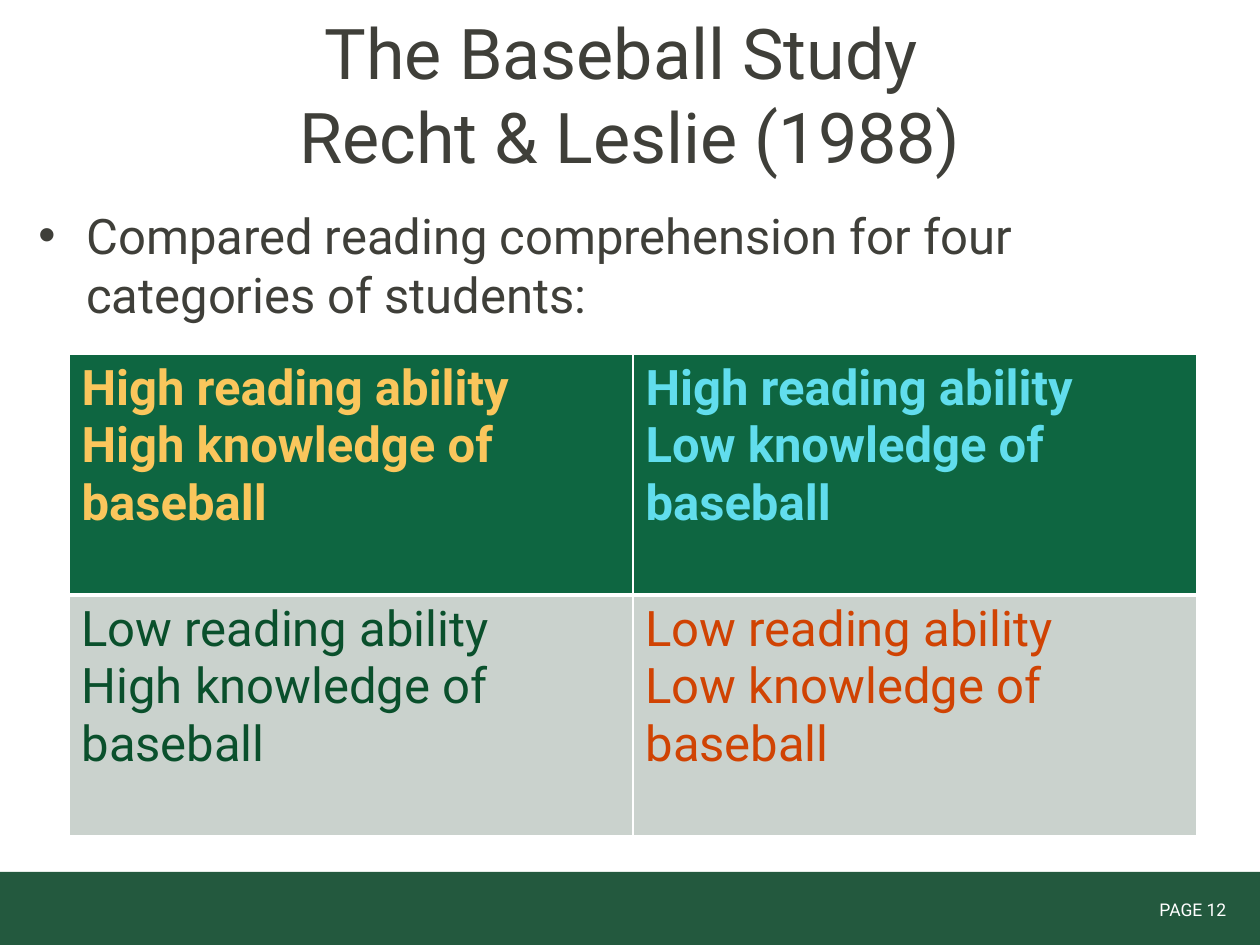
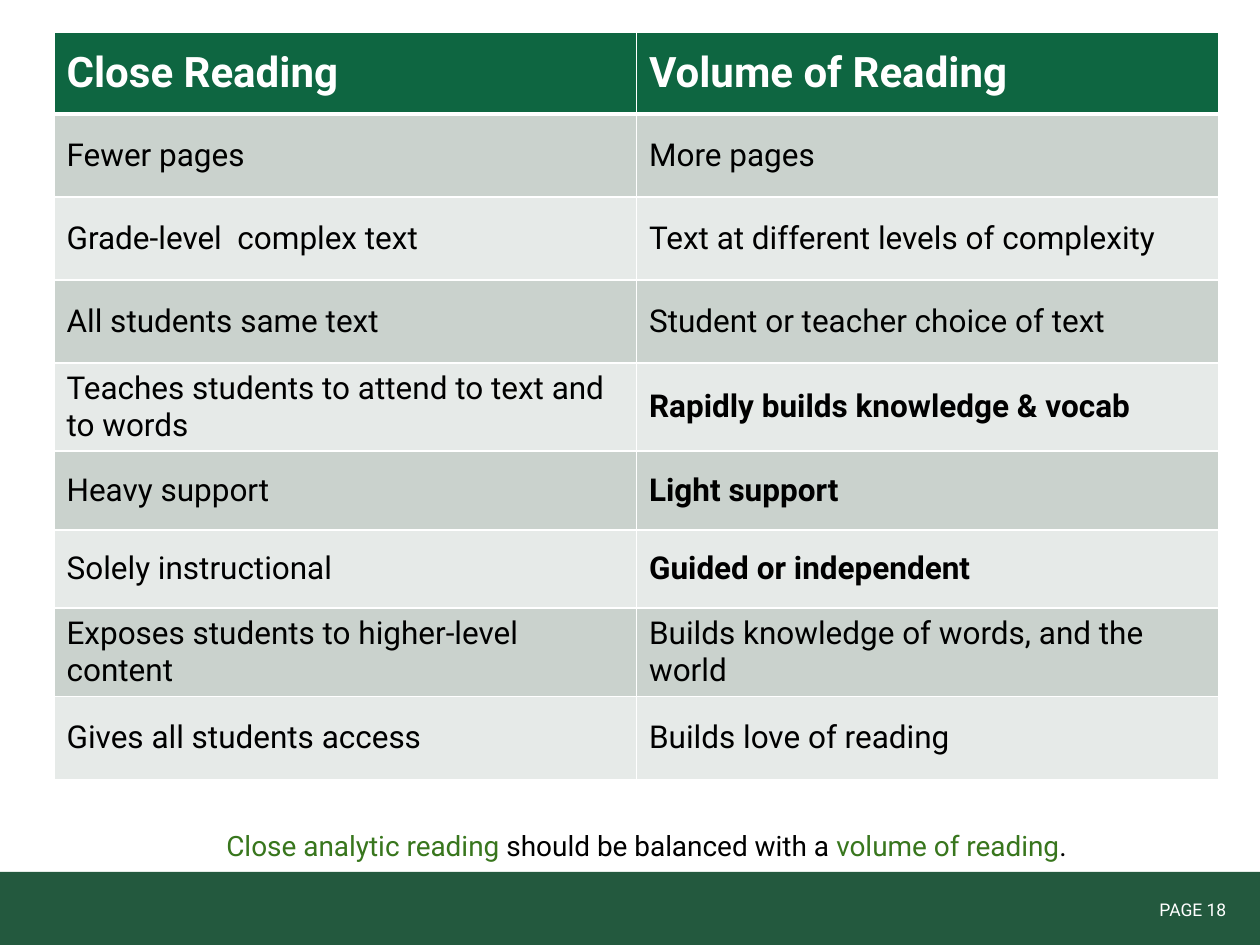
from dataclasses import dataclass

from lxml import etree
from pptx import Presentation
from pptx import util as u
from pptx.dml import color
from pptx.enum import shapes, text
from pptx.oxml import ns

PX_PER_INCH = 126
FONT = "Roboto"
WHITE, BLACK, INK = "FFFFFF", "000000", "3F3F39"
BAND_GREEN, HEADER_GREEN, ACCENT_GREEN = "23593E", "0E6641", "38761D"
DARK_ROW, LIGHT_ROW = "CAD2CD", "E6EAE8"
THIN, THICK = 1, 3
TITLE_ONLY, BLANK = 5, 6


@dataclass(frozen=True)
class Box:
    left: int
    top: int
    width: int
    height: int

    def emu(self) -> tuple[int, int, int, int]:
        return px(self.left), px(self.top), px(self.width), px(self.height)


@dataclass(frozen=True)
class Style:
    size: int
    ink: str
    bold: bool = False


@dataclass(frozen=True)
class Cell:
    lines: tuple[str, ...]
    style: Style


BAND = Box(0, 872, 1261, 74)
PAGE_LABEL = Box(1043, 893, 200, 34)
LABEL_STYLE = Style(10, WHITE)
HEAD_STYLE = Style(24, WHITE, bold=True)
ROW_STYLE = Style(18, BLACK)
STRONG_STYLE = Style(18, BLACK, bold=True)


def px(length: int) -> int:
    return round(length * u.Inches(1) / PX_PER_INCH)


def rgb(value: str) -> color.RGBColor:
    return color.RGBColor.from_string(value)


def set_font(font, style: Style) -> None:
    font.name = FONT
    font.size = u.Pt(style.size)
    font.bold = style.bold
    font.color.rgb = rgb(style.ink)


def add_text_box(page, box: Box):
    """Add an empty wrapping text box and return its text frame."""
    frame = page.shapes.add_textbox(*box.emu()).text_frame
    frame.word_wrap = True
    return frame


def add_page(deck, layout: int, number: int):
    """Add a slide with the green band and its page label."""
    page = deck.slides.add_slide(deck.slide_layouts[layout])
    band = page.shapes.add_shape(shapes.MSO_SHAPE.RECTANGLE, *BAND.emu())
    band.shadow.inherit = False
    band.fill.solid()
    band.fill.fore_color.rgb = rgb(BAND_GREEN)
    band.line.fill.background()
    para = add_text_box(page, PAGE_LABEL).paragraphs[0]
    para.text = f"PAGE {number} "
    para.alignment = text.PP_ALIGN.RIGHT
    set_font(para.font, LABEL_STYLE)
    return page


def set_title(page, box: Box, lines: tuple[str, ...], style: Style) -> None:
    title = page.shapes.title
    title.left, title.top, title.width, title.height = box.emu()
    frame = title.text_frame
    frame.word_wrap = True
    frame.auto_size = text.MSO_AUTO_SIZE.NONE
    frame.vertical_anchor = text.MSO_ANCHOR.MIDDLE
    para = frame.paragraphs[0]
    for index, line in enumerate(lines):
        if index:
            para.add_line_break()
        para.add_run().text = line
    para.alignment = text.PP_ALIGN.CENTER
    set_font(para.font, style)


def add_bullet(para, ink: str, indent: int) -> None:
    properties = para._p.get_or_add_pPr()
    properties.set("marL", str(px(indent)))
    properties.set("indent", str(-px(indent)))
    bullet_color = etree.SubElement(properties, ns.qn("a:buClr"))
    etree.SubElement(bullet_color, ns.qn("a:srgbClr"), val=ink)
    etree.SubElement(properties, ns.qn("a:buFont"), typeface="Arial")
    etree.SubElement(properties, ns.qn("a:buChar"), char="•")


def set_borders(cell, top: int, bottom: int) -> None:
    properties = cell._tc.get_or_add_tcPr()
    sides = {"lnL": THIN, "lnR": THIN, "lnT": top, "lnB": bottom}
    for side, points in sides.items():
        line = etree.SubElement(properties, ns.qn(f"a:{side}"), w=str(u.Pt(points)))
        fill = etree.SubElement(line, ns.qn("a:solidFill"))
        etree.SubElement(fill, ns.qn("a:srgbClr"), val=WHITE)


def add_grid(page, box: Box, heights: list[int], rows: list[tuple[Cell, ...]],
             anchor: text.MSO_ANCHOR) -> None:
    """Add a table with a green header row over alternating grey rows."""
    grid = page.shapes.add_table(len(rows), len(rows[0]), *box.emu()).table
    grid.horz_banding = False
    for row, height in zip(grid.rows, heights):
        row.height = px(height)
    for row_index, row in enumerate(rows):
        fill = HEADER_GREEN if row_index == 0 else (LIGHT_ROW, DARK_ROW)[row_index % 2]
        top = THICK if row_index == 1 else THIN
        bottom = THICK if row_index == 0 else THIN
        for column_index, content in enumerate(row):
            cell = grid.cell(row_index, column_index)
            set_borders(cell, top, bottom)
            cell.fill.solid()
            cell.fill.fore_color.rgb = rgb(fill)
            cell.vertical_anchor = anchor
            cell.text = "\n".join(content.lines)
            for para in cell.text_frame.paragraphs:
                set_font(para.font, content.style)


def build_baseball_study(deck) -> None:
    page = add_page(deck, TITLE_ONLY, 12)
    set_title(page, Box(63, 15, 1134, 158),
              ("The Baseball Study ", "Recht & Leslie (1988)"), Style(40, INK))

    para = add_text_box(page, Box(26, 199, 1134, 624)).paragraphs[0]
    para.text = "Compared reading comprehension for four categories of students:"
    add_bullet(para, INK, 48)
    set_font(para.font, Style(28, INK))

    def group(reading: str, knowledge: str, ink: str, bold: bool = False) -> Cell:
        lines = (f"{reading} reading ability", f"{knowledge} knowledge of baseball")
        return Cell(lines, Style(28, ink, bold))

    groups = [
        (group("High", "High", "FAC65C", True), group("High", "Low", "61DDED", True)),
        (group("Low", "High", "0A502C"), group("Low", "Low", "D04303")),
    ]
    add_grid(page, Box(69, 354, 1128, 482), [241, 241], groups, text.MSO_ANCHOR.TOP)


def build_reading_comparison(deck) -> None:
    page = add_page(deck, BLANK, 18)
    comparison = [
        ("Close Reading", "Volume of Reading"),
        ("Fewer pages", "More pages"),
        ("Grade-level  complex text", "Text at different levels of complexity"),
        ("All students same text", "Student or teacher choice of text"),
        ("Teaches students to attend to text and to words",
         "Rapidly builds knowledge & vocab"),
        ("Heavy support", "Light support"),
        ("Solely instructional", "Guided or independent"),
        ("Exposes students to higher-level content",
         "Builds knowledge of words, and the world"),
        ("Gives all students access", "Builds love of reading"),
    ]
    strong_rows = (4, 5, 6)
    rows = []
    for index, (close, volume) in enumerate(comparison):
        close_style = ROW_STYLE if index else HEAD_STYLE
        volume_style = STRONG_STYLE if index in strong_rows else close_style
        rows.append((Cell((close,), close_style), Cell((volume,), volume_style)))
    heights = [82, 83, 83, 83, 86, 79, 78, 86, 83]
    add_grid(page, Box(54, 32, 1165, sum(heights)), heights, rows, text.MSO_ANCHOR.MIDDLE)

    frame = add_text_box(page, Box(64, 816, 1165, 147))
    frame.margin_top = frame.margin_bottom = px(13)
    para = frame.paragraphs[0]
    para.alignment = text.PP_ALIGN.CENTER
    spans = [
        ("Close analytic reading ", ACCENT_GREEN),
        ("should be balanced with a ", BLACK),
        ("volume of reading", ACCENT_GREEN),
        (".", BLACK),
    ]
    for words, ink in spans:
        span = para.add_run()
        span.text = words
        set_font(span.font, Style(16, ink))


def main() -> None:
    deck = Presentation()
    deck.slide_width, deck.slide_height = u.Inches(10), u.Inches(7.5)
    build_baseball_study(deck)
    build_reading_comparison(deck)
    deck.save("out.pptx")


if __name__ == "__main__":
    main()
